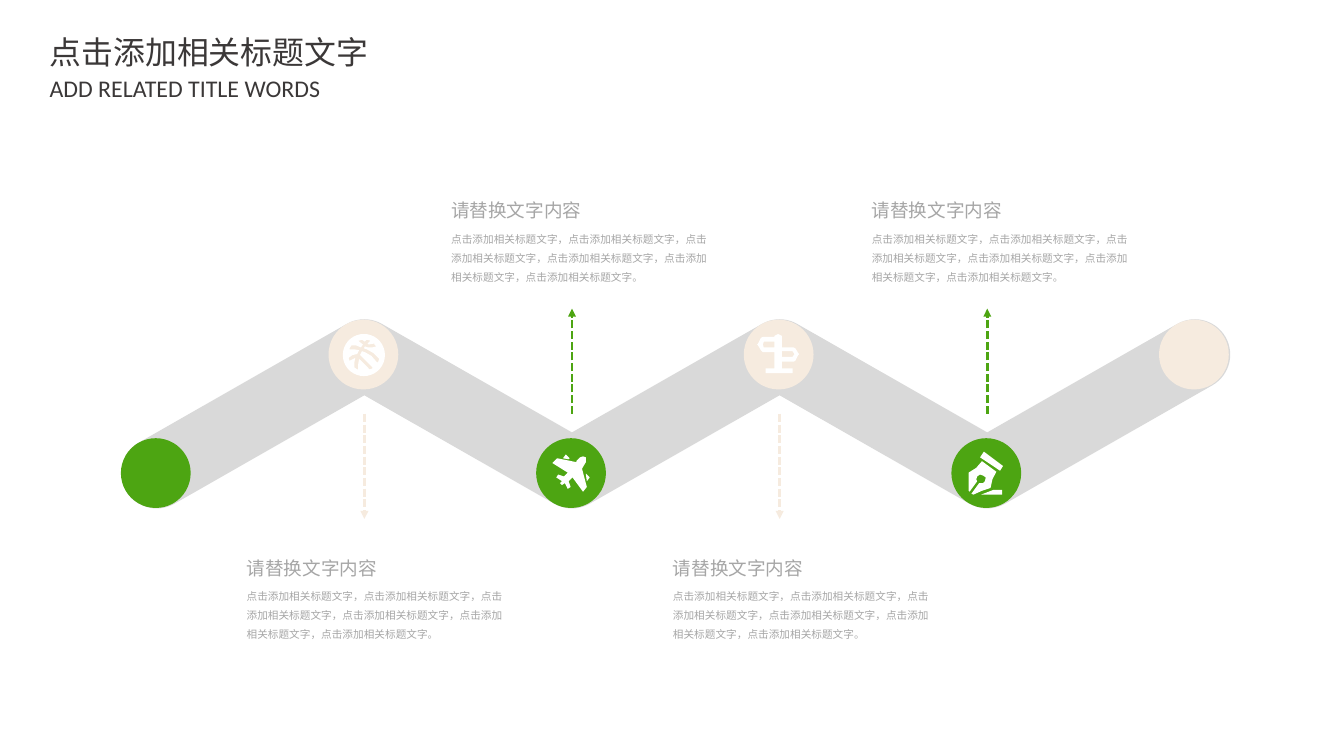
import math
from collections import namedtuple

import pptx
import pptx.dml.color
import pptx.enum.dml
import pptx.enum.shapes
import pptx.enum.text
import pptx.oxml
import pptx.oxml.ns
import pptx.util

WIDTH, HEIGHT = 14.06, 7.91
GREEN, CREAM, GREY = "4DA512", "F6EBDF", "D9D9D9"
WHITE, TEXT_GREY, DARK = "FFFFFF", "A6A6A6", "3B3838"
CJK_FONT = "Noto Sans CJK SC"

HEADING = "请替换文字内容"
BODY = "，".join(["点击添加相关标题文字"] * 6) + "。"

Box = namedtuple("Box", "left top width height")
ZIGZAG = Box(1.64, 3.71, 10.86, 1.24)  # spans the centres of the six nodes
NODE_COUNT = 6
BAND_RADIUS = 0.37
DISC = 0.73

# Contours of each icon, in hundredths of an inch from the corner of its disc.
BALL_RIM = " ".join(
    f"{37 + 22 * math.cos(math.radians(a)):.1f},{37 + 22 * math.sin(math.radians(a)):.1f}"
    for a in range(0, 360, 10))
BALL = [
    BALL_RIM,
    "24,27 22,30 22,31 27,31 32,32 31,34 30,36 25,37 21,40 22,43 28,40 27,45 27,50 "
    "30,52 31,52 31,47 32,41 37,46 43,52 46,51 46,50 40,44 33,37 34,35 35,33 38,34 "
    "45,38 51,45 52,44 53,41 47,35 40,31 37,30 38,28 41,29 46,29 50,28 48,26 48,25 "
    "42,26 41,25 44,22 40,21 38,23 35,21 32,22 31,22 36,26 34,29 29,27",
]
SIGNPOST = [
    "32,23 21,23 20,26 21,29 32,29",
    "40,29 52,29 54,30 57,35 58,36 57,37 54,43 52,44 40,44 40,51 51,51 51,56 23,56 "
    "23,51 32,51 32,34 20,34 18,32 15,27 14,26 15,25 18,19 20,18 32,18 32,17 36,15 40,17",
    "51,33 40,33 40,39 51,39 53,36",
]
PLANE = [
    "52,20 52,25 49,30 48,32 53,51 49,56 38,41 34,45 36,51 33,53 30,47 27,49 25,47 "
    "27,45 21,41 23,38 29,40 33,36 17,26 22,21 42,25 42,24 46,20 49,19",
    "56,41 52,37 52,38 53,45",
    "31,17 28,21 34,22 35,21",
]
PEN = [
    "19,56 18,55 18,36 26,31 32,24 47,35 43,43 41,52 32,55 23,59 21,58 29,47 33,47 "
    "35,45 36,41 33,39 30,38 27,40 26,43 27,45",
    "31,59 53,59 53,54 44,54",
    "51,34 54,29 34,14 30,20",
]

# Node number, icon, left edge of its text.
MILESTONES = [(1, BALL, 2.47), (2, PLANE, 4.61), (3, SIGNPOST, 6.93), (4, PEN, 9.01)]


def color(value):
    return pptx.dml.color.RGBColor.from_string(value)


def inches(*values):
    return [pptx.util.Inches(value) for value in values]


def paint(shape, fill):
    shape.shadow.inherit = False
    shape.fill.solid()
    shape.fill.fore_color.rgb = color(fill)
    shape.line.fill.background()


def write(shape, text, size, font=CJK_FONT, fill=TEXT_GREY, spacing=1.0, side=0.1):
    frame = shape.text_frame
    frame.word_wrap = True
    frame.auto_size = pptx.enum.text.MSO_AUTO_SIZE.NONE
    frame.vertical_anchor = pptx.enum.text.MSO_ANCHOR.TOP
    frame.margin_left, frame.margin_right = inches(side, side)
    frame.margin_top, frame.margin_bottom = inches(0.05, 0.05)
    paragraph = frame.paragraphs[0]
    paragraph.alignment = pptx.enum.text.PP_ALIGN.LEFT
    paragraph.line_spacing = spacing
    run = paragraph.add_run()
    run.text = text
    run.font.name = font
    run.font.size = pptx.util.Pt(size)
    run.font.color.rgb = color(fill)
    east_asian = pptx.oxml.parse_xml(
        f'<a:ea {pptx.oxml.ns.nsdecls("a")} typeface="{CJK_FONT}"/>')
    run.font._element.find(pptx.oxml.ns.qn("a:latin")).addnext(east_asian)


def add_text(slide, box, text, **style):
    write(slide.shapes.add_textbox(*inches(*box)), text, **style)


def add_outline(slide, contours, fill):
    """Draw one filled freeform from closed contours of points in inches."""
    contours = [[inches(*point) for point in contour] for contour in contours]
    builder = slide.shapes.build_freeform(*contours[0][0], scale=1.0)
    for number, contour in enumerate(contours):
        if number:
            builder.move_to(*contour[0])
        builder.add_line_segments(contour[1:], close=True)
    paint(builder.convert_to_shape(), fill)


def zigzag_nodes(box):
    step = box.width / (NODE_COUNT - 1)
    return [(box.left + step * i, box.top + (0 if i % 2 else box.height))
            for i in range(NODE_COUNT)]


def band_outline(nodes, radius):
    """Walk there and back along the nodes, rounding outer turns and mitring inner ones."""
    loop = nodes + nodes[-2:0:-1]
    points = []
    for i, (x, y) in enumerate(loop):
        before, after = loop[i - 1], loop[(i + 1) % len(loop)]
        arriving = math.degrees(math.atan2(y - before[1], x - before[0]))
        leaving = math.degrees(math.atan2(after[1] - y, after[0] - x))
        turn = round(leaving - arriving, 4) % 360
        if turn <= 180:
            steps = max(2, round(turn / 6))
            angles = [arriving - 90 + turn * k / steps for k in range(steps + 1)]
            reach = radius
        else:
            turn -= 360
            angles = [arriving - 90 + turn / 2]
            reach = radius / math.cos(math.radians(turn / 2))
        points += [(x + reach * math.cos(math.radians(angle)),
                    y + reach * math.sin(math.radians(angle))) for angle in angles]
    return points


def add_arrow(slide, x, start, end, fill):
    arrow = slide.shapes.add_connector(
        pptx.enum.shapes.MSO_CONNECTOR.STRAIGHT, *inches(x, start, x, end))
    arrow.line.color.rgb = color(fill)
    arrow.line.width = pptx.util.Pt(2)
    arrow.line.dash_style = pptx.enum.dml.MSO_LINE.SQUARE_DOT
    namespace = pptx.oxml.ns.nsdecls("a")
    arrow.line._get_or_add_ln().append(
        pptx.oxml.parse_xml(f'<a:tailEnd {namespace} type="triangle"/>'))
    arrow._element.spPr.append(pptx.oxml.parse_xml(f"<a:effectLst {namespace}/>"))


def add_header(slide, box):
    title = slide.shapes.title
    title.left, title.top, title.width, title.height = inches(
        box.left, box.top, box.width, 0.51)
    write(title, "点击添加相关标题文字", size=24, fill=DARK, side=0.11)
    add_text(slide, Box(box.left, box.top + 0.43, box.width, 0.41),
             "ADD RELATED TITLE WORDS", size=18, font="Calibri", fill=DARK, side=0.11)


def add_zigzag(slide, box):
    nodes = zigzag_nodes(box)
    add_outline(slide, [band_outline(nodes, BAND_RADIUS)], GREY)
    icons = {number: icon for number, icon, _ in MILESTONES}
    for number, (x, y) in enumerate(nodes):
        left, top = x - 0.01 - DISC / 2, y - DISC / 2
        disc = slide.shapes.add_shape(
            pptx.enum.shapes.MSO_SHAPE.OVAL, *inches(left, top, DISC, DISC))
        paint(disc, CREAM if number % 2 else GREEN)
        if number in icons:
            contours = [[(left + float(px) / 100, top + float(py) / 100)
                         for px, py in (pair.split(",") for pair in contour.split())]
                        for contour in icons[number]]
            add_outline(slide, contours, WHITE)


def add_milestones(slide, box):
    """Point an arrow away from each node to its text, below peaks and above valleys."""
    nodes = zigzag_nodes(box)
    middle = box.top + box.height / 2
    for number, _, left in MILESTONES:
        peak = number % 2
        add_arrow(slide, nodes[number][0], middle, middle + (1.1 if peak else -1.1),
                  CREAM if peak else GREEN)
        top = middle + (1.4 if peak else -2.34)
        add_text(slide, Box(left, top, 2.66, 0.39), HEADING,
                 size=14, font="Arial", spacing=1.2, side=0.11)
        add_text(slide, Box(left + 0.02, top + 0.33, 2.9, 0.7), BODY,
                 size=8, spacing=1.5, side=0.09)


def main():
    presentation = pptx.Presentation()
    presentation.slide_width, presentation.slide_height = inches(WIDTH, HEIGHT)
    slide = presentation.slides.add_slide(presentation.slide_layouts[5])
    add_header(slide, Box(0.41, 0.29, 4, 0.84))
    add_zigzag(slide, ZIGZAG)
    add_milestones(slide, ZIGZAG)
    presentation.save("out.pptx")


if __name__ == "__main__":
    main()
